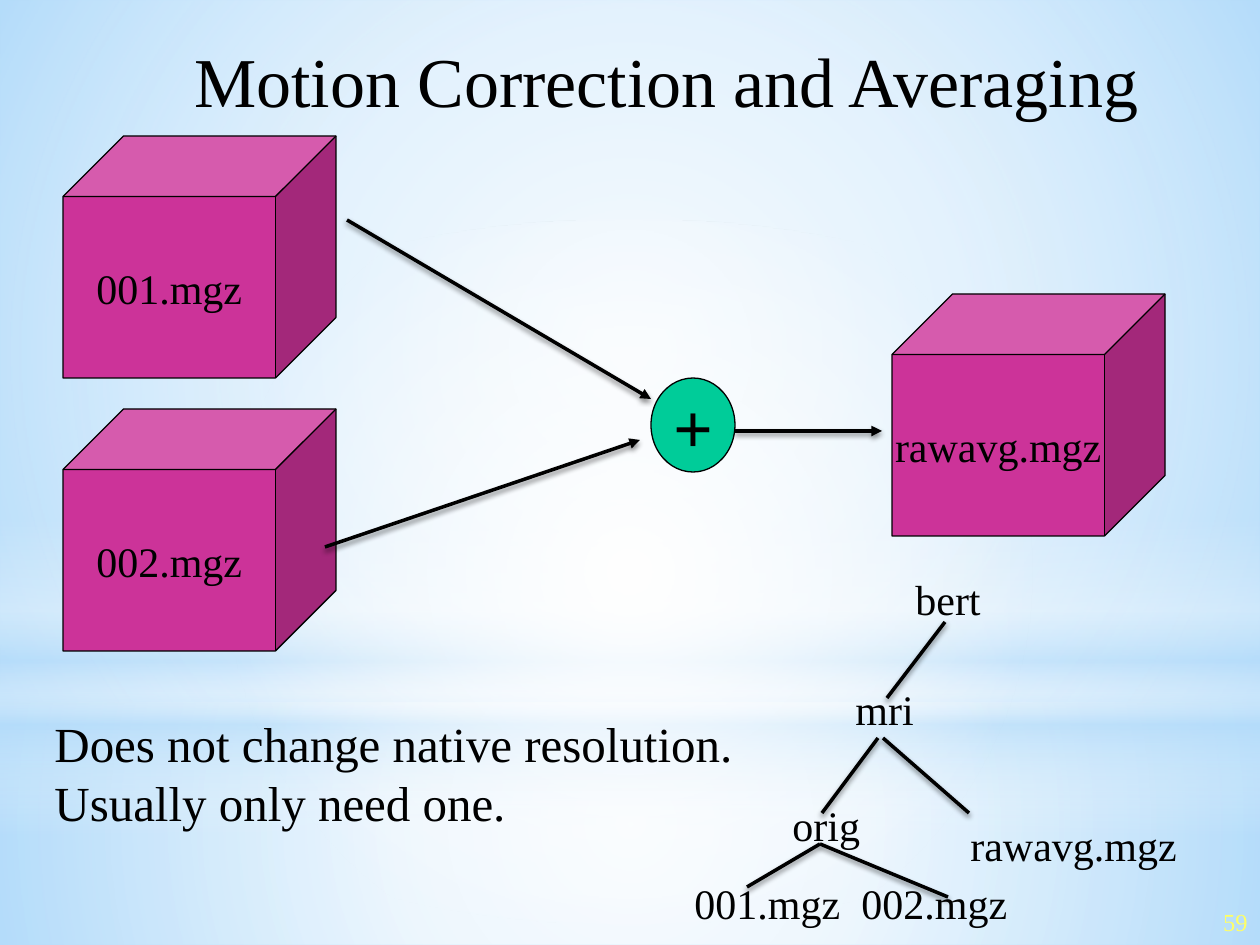
from lxml import etree
from pptx import Presentation
from pptx.dml.color import RGBColor
from pptx.enum.shapes import MSO_CONNECTOR, MSO_SHAPE
from pptx.enum.text import MSO_ANCHOR, PP_ALIGN
from pptx.oxml import parse_xml
from pptx.oxml.ns import nsdecls, qn
from pptx.util import Emu, Pt

PX = 914400 / 126
FONT = "Times New Roman"
BLACK = RGBColor(0x00, 0x00, 0x00)
WHITE = RGBColor(0xFF, 0xFF, 0xFF)
SKY = RGBColor(0xB4, 0xDC, 0xFA)
MAGENTA = RGBColor(0xCC, 0x33, 0x99)
GREEN = RGBColor(0x00, 0xCC, 0x99)
YELLOW = RGBColor(0xFF, 0xFF, 0x66)

RADIAL = ('<a:path path="circle"><a:fillToRect l="50000" t="50000" '
          'r="50000" b="50000"/></a:path>')
VERTICAL = '<a:lin ang="5400000" scaled="0"/>'


def px(*values):
    return [Emu(round(v * PX)) for v in values]


def write(sp, text, size=24, color=BLACK, bold=False, align=PP_ALIGN.LEFT,
          anchor=MSO_ANCHOR.TOP, wrap=False):
    tf = sp.text_frame
    tf.word_wrap = wrap
    tf.vertical_anchor = anchor
    for i, line in enumerate(text.split("\n")):
        p = tf.add_paragraph() if i else tf.paragraphs[0]
        p.alignment = align
        r = p.add_run()
        r.text = line
        r.font.name = FONT
        r.font.size = Pt(size)
        r.font.bold = bold
        r.font.color.rgb = color


def add_text(s, text, box, **fmt):
    write(s.shapes.add_textbox(*px(*box)), text, **fmt)


def add_glow(s, kind, box, stops, direction):
    """Add a borderless gradient; stops are (position, colour, opacity) in percent."""
    sp = s.shapes.add_shape(kind, *px(*box))
    sp.shadow.inherit = False
    sp.line.fill.background()
    marks = "".join(
        f'<a:gs pos="{pos * 1000}"><a:srgbClr val="{color}">'
        f'<a:alpha val="{opacity * 1000}"/></a:srgbClr></a:gs>'
        for pos, color, opacity in stops)
    grad = parse_xml(f'<a:gradFill {nsdecls("a")} rotWithShape="1">'
                     f'<a:gsLst>{marks}</a:gsLst>{direction}</a:gradFill>')
    sp._element.spPr.find(qn("a:prstGeom")).addnext(grad)


def add_node(s, kind, text, box, color, **fmt):
    sp = s.shapes.add_shape(kind, *px(*box))
    sp.shadow.inherit = False
    sp.fill.solid()
    sp.fill.fore_color.rgb = color
    sp.line.color.rgb = BLACK
    sp.line.width = Pt(0.75)
    write(sp, text, align=PP_ALIGN.CENTER, anchor=MSO_ANCHOR.MIDDLE, **fmt)


def add_line(s, ends, arrow=False):
    cx = s.shapes.add_connector(MSO_CONNECTOR.STRAIGHT, *px(*ends))
    cx.line.color.rgb = BLACK
    cx.line.width = Pt(2)
    if arrow:
        etree.SubElement(cx.line._get_or_add_ln(), qn("a:tailEnd"), type="triangle")
    cx._element.spPr.append(parse_xml(
        f'<a:effectLst {nsdecls("a")}><a:outerShdw blurRad="{Pt(3.1)}" '
        f'dist="{Pt(1.8)}" dir="5400000" rotWithShape="0"><a:srgbClr val="{BLACK}">'
        '<a:alpha val="45000"/></a:srgbClr></a:outerShdw></a:effectLst>'))


def add_backdrop(s):
    s.background.fill.solid()
    s.background.fill.fore_color.rgb = SKY
    rect, oval = MSO_SHAPE.RECTANGLE, MSO_SHAPE.OVAL
    add_glow(s, rect, (0, 703, 1260, 242),
             [(0, WHITE, 91), (37, WHITE, 76), (100, SKY, 79)], RADIAL)
    add_glow(s, rect, (0, 0, 1260, 703),
             [(0, WHITE, 89), (48, WHITE, 62), (100, SKY, 79)], RADIAL)
    add_glow(s, rect, (0, 519, 1260, 315),
             [(0, WHITE, 0), (29, WHITE, 30), (45, SKY, 40),
              (55, WHITE, 26), (65, SKY, 60), (100, WHITE, 0)], VERTICAL)
    add_glow(s, oval, (0, 220, 1260, 703),
             [(0, WHITE, 100), (56, WHITE, 0)], RADIAL)


def add_flow(s):
    for text, x, y in [("001.mgz", 63, 136), ("002.mgz", 63, 409),
                       ("rawavg.mgz", 892, 294)]:
        add_node(s, MSO_SHAPE.CUBE, text, (x, y, 273, 242), MAGENTA)
    add_node(s, MSO_SHAPE.OVAL, "+", (651, 378, 84, 94), GREEN, size=40, bold=True)
    for ends in [(347, 220, 651, 399), (325, 547, 640, 440), (735, 431, 882, 431)]:
        add_line(s, ends, arrow=True)


def add_tree(s):
    for text, x, y, width in [("bert", 903, 567, 92), ("mri", 843, 677, 84),
                              ("orig", 780, 793, 93), ("rawavg.mgz", 958, 813, 233),
                              ("001.mgz", 682, 871, 171), ("002.mgz", 849, 871, 171)]:
        add_text(s, text, (x, y, width, 64))
    for ends in [(887, 698, 945, 622), (822, 813, 878, 738), (969, 813, 883, 738),
                 (747, 887, 820, 844), (948, 897, 820, 844)]:
        add_line(s, ends)


def main():
    prs = Presentation()
    prs.slide_width, prs.slide_height = px(1260, 945)
    s = prs.slides.add_slide(prs.slide_layouts[6])
    add_backdrop(s)
    add_text(s, "59", (998, 901, 262, 63), size=14, color=YELLOW,
             align=PP_ALIGN.RIGHT, wrap=True)
    add_text(s, "Motion Correction and Averaging", (136, 0, 1061, 158), size=40,
             align=PP_ALIGN.CENTER, anchor=MSO_ANCHOR.MIDDLE, wrap=True)
    add_flow(s)
    add_tree(s)
    add_text(s, "Does not change native resolution.\nUsually only need one.",
             (42, 707, 711, 132), size=28)
    prs.save("out.pptx")


if __name__ == "__main__":
    main()
